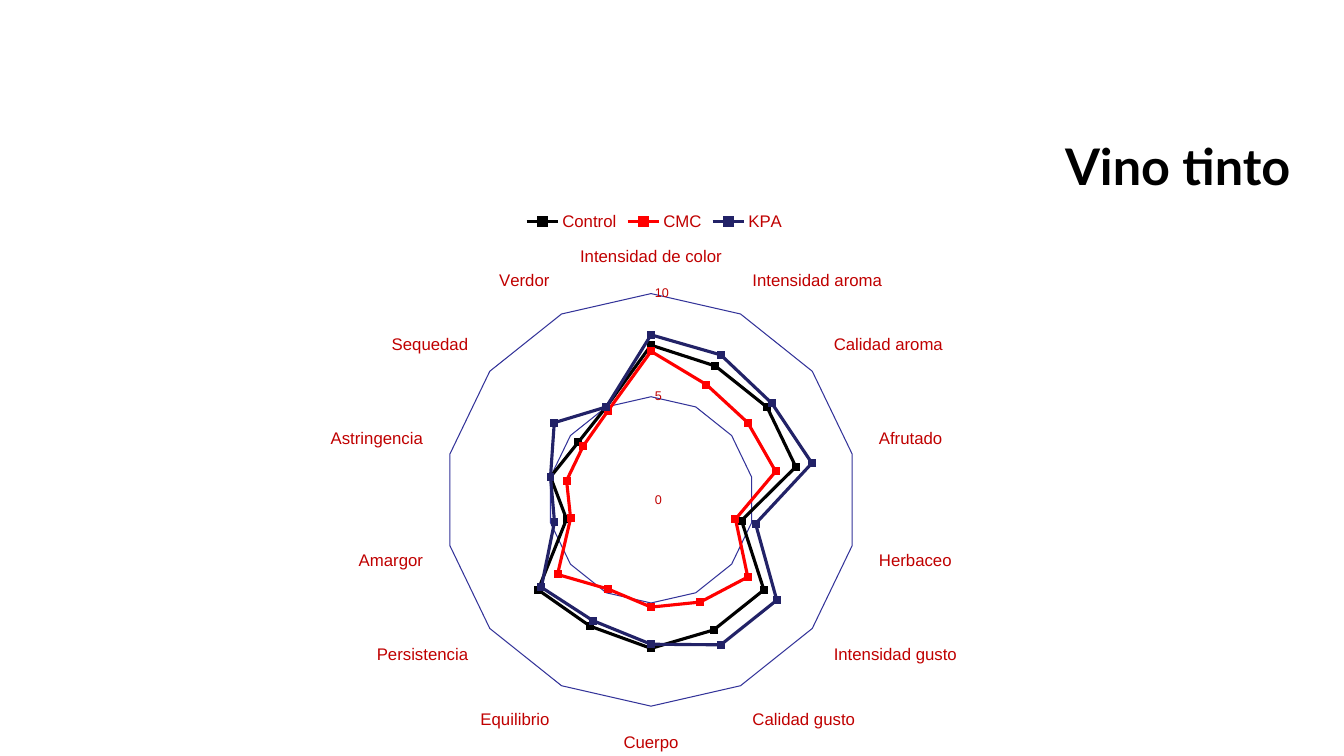
from dataclasses import dataclass

from lxml import etree
from pptx import Presentation
from pptx.chart.data import CategoryChartData
from pptx.dml.color import RGBColor
from pptx.enum.chart import XL_CHART_TYPE, XL_LEGEND_POSITION, XL_MARKER_STYLE, XL_TICK_MARK
from pptx.enum.text import MSO_AUTO_SIZE
from pptx.oxml.ns import qn
from pptx.util import Cm, Pt

RADAR = XL_CHART_TYPE.RADAR_MARKERS
LEGEND_TOP = XL_LEGEND_POSITION.TOP
SQUARE = XL_MARKER_STYLE.SQUARE
NO_TICK = XL_TICK_MARK.NONE
FIT_SHAPE = MSO_AUTO_SIZE.SHAPE_TO_FIT_TEXT

ATTRIBUTES = [
    "Intensidad de color", "Intensidad aroma", "Calidad aroma", "Afrutado", "Herbaceo",
    "Intensidad gusto", "Calidad gusto", "Cuerpo", "Equilibrio", "Persistencia",
    "Amargor", "Astringencia", "Sequedad", "Verdor",
]
SCORES = {
    "Control": [7.5, 7.2, 7.2, 7.2, 4.5, 7, 7, 7.2, 6.8, 7, 4.2, 5, 4.5, 5],
    "CMC": [7.2, 6.2, 6, 6.2, 4.2, 6, 5.5, 5.2, 4.8, 5.8, 4, 4.2, 4.2, 4.8],
    "KPA": [8, 7.8, 7.5, 8, 5.2, 7.8, 7.8, 7, 6.5, 6.8, 4.8, 5, 6, 5],
}


@dataclass(frozen=True)
class Theme:
    """Colours, fonts and type sizes of the slide."""

    title_font: str = "Lato"
    chart_font: str = "Arial"
    title_size: int = 36
    label_size: int = 12
    chart_size: int = 10
    scale_size: int = 9
    title_color: str = "000000"
    label_color: str = "C00000"
    grid_color: str = "333399"
    axis_color: str = "D9D9D9"
    wine_colors: tuple = ("000000", "FF0000", "222267")


def format_font(font, name, size, color, bold=False):
    """Apply one text format to a font."""
    font.name = name
    font.size = Pt(size)
    font.bold = bold
    font.color.rgb = RGBColor.from_string(color)


def write_text(para, text, **style):
    """Add a span of text in the given format."""
    span = para.add_run()
    span.text = text
    format_font(span.font, **style)


def format_line(line, color, width):
    """Give a line its colour and width."""
    line.color.rgb = RGBColor.from_string(color)
    line.width = Pt(width)


def place_plot(chart, **fractions):
    """Fix the inner plot area as fractions of the chart frame."""
    plot_area = chart._chartSpace.chart.plotArea
    for old_layout in plot_area.findall(qn("c:layout")):
        plot_area.remove(old_layout)
    layout = etree.Element(qn("c:layout"))
    manual = etree.SubElement(layout, qn("c:manualLayout"))
    settings = {"layoutTarget": "inner", "xMode": "edge", "yMode": "edge", **fractions}
    for tag, value in settings.items():
        etree.SubElement(manual, qn(f"c:{tag}")).set("val", str(value))
    plot_area.insert(0, layout)


class SlideBuilder:
    """Holds the theme and the current slide."""

    def __init__(self, slide, theme):
        self.slide = slide
        self.theme = theme

    def title(self, text, left, top, width, height):
        """Add the title box."""
        theme = self.theme
        box = self.slide.shapes.add_textbox(Cm(left), Cm(top), Cm(width), Cm(height))
        frame = box.text_frame
        frame.word_wrap = False
        frame.auto_size = FIT_SHAPE
        write_text(frame.paragraphs[0], text, name=theme.title_font,
                   size=theme.title_size, color=theme.title_color, bold=True)

    def radar(self, categories, scores, left, top, width, height):
        """Add the radar chart with one line per wine."""
        data = CategoryChartData()
        data.categories = categories
        for name, values in scores.items():
            data.add_series(name, values)
        frame = self.slide.shapes.add_chart(
            RADAR, Cm(left), Cm(top), Cm(width), Cm(height), data)
        chart = frame.chart
        chart.has_title = False
        self.label(chart.font, self.theme.chart_size)
        chart.has_legend = True
        chart.legend.position = LEGEND_TOP
        chart.legend.include_in_layout = False
        self.label(chart.legend.font, self.theme.label_size)
        self.axes(chart)
        self.series(chart.plots[0])
        place_plot(chart, x=0.285, y=0.155, w=0.424, h=0.695)

    def label(self, font, size):
        """Format chart text."""
        format_font(font, self.theme.chart_font, size, self.theme.label_color)

    def axes(self, chart):
        """Format the attribute and score axes."""
        theme = self.theme
        attributes, scale = chart.category_axis, chart.value_axis
        for axis, size in ((attributes, theme.label_size), (scale, theme.scale_size)):
            axis.major_tick_mark = NO_TICK
            axis.minor_tick_mark = NO_TICK
            self.label(axis.tick_labels.font, size)
        attributes.has_major_gridlines = False
        format_line(attributes.format.line, theme.axis_color, 0.75)
        scale.minimum_scale, scale.maximum_scale, scale.major_unit = 0, 10, 5
        scale.tick_labels.number_format = "General"
        scale.tick_labels.number_format_is_linked = False
        scale.has_major_gridlines = True
        format_line(scale.major_gridlines.format.line, theme.grid_color, 0.75)
        scale.format.line.fill.background()

    def series(self, plot):
        """Colour each wine's line and square markers."""
        plot.vary_by_categories = False
        for wine, color in zip(plot.series, self.theme.wine_colors):
            format_line(wine.format.line, color, 2.25)
            marker = wine.marker
            marker.style = SQUARE
            marker.size = 5
            marker.format.fill.solid()
            marker.format.fill.fore_color.rgb = RGBColor.from_string(color)
            format_line(marker.format.line, color, 0.75)


def main():
    """Build and save the deck."""
    deck = Presentation()
    deck.slide_width, deck.slide_height = Cm(33.87), Cm(19.05)
    page = SlideBuilder(deck.slides.add_slide(deck.slide_layouts[6]), Theme())
    page.title("Vino tinto", 26.59, 3.28, 6.43, 1.8)
    page.radar(ATTRIBUTES, SCORES, 3.18, 5.08, 26.62, 14.96)
    deck.save("out.pptx")


if __name__ == "__main__":
    main()
